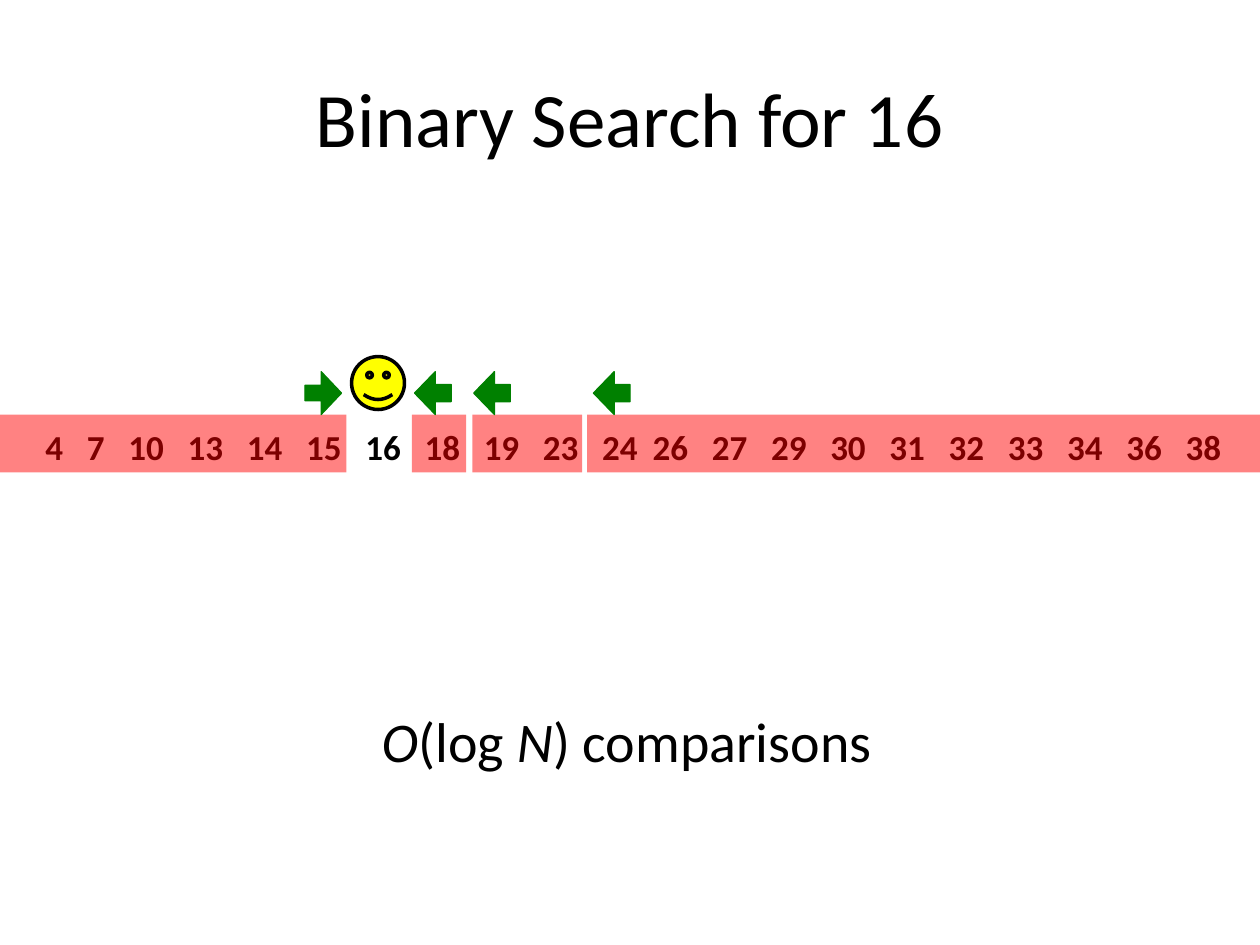
from lxml.etree import SubElement
from pptx import Presentation
from pptx.dml.color import RGBColor
from pptx.enum.shapes import MSO_SHAPE
from pptx.enum.text import MSO_ANCHOR, PP_ALIGN
from pptx.oxml.ns import qn
from pptx.util import Inches, Pt

BLACK, RED, GREEN, YELLOW = "000000", "FF0000", "008000", "FFFF00"
NUMBERS = [4, 7, 10, 13, 14, 15, 16, 18, 19, 23, 24,
           26, 27, 29, 30, 31, 32, 33, 34, 36, 38]
NUMBER_STEP = 0.47
# Distance of each number from the first one
NUMBER_OFFSETS = ([0, 0.33]
                  + [0.66 + NUMBER_STEP * i for i in range(9)]
                  + [4.82 + NUMBER_STEP * i for i in range(10)])
# Left edge and width of each discarded range
DISCARDED = [(0, 2.75), (4.66, 5.34), (3.75, 0.87), (3.27, 0.43)]
RIGHT_ARROW = (MSO_SHAPE.RIGHT_ARROW, (0.361, 0.556))
LEFT_ARROW = (MSO_SHAPE.LEFT_ARROW, (0.402, 0.568))
PROBES = [(2.42, RIGHT_ARROW), (4.71, LEFT_ARROW),
          (3.76, LEFT_ARROW), (3.29, LEFT_ARROW)]


def color(value):
    return RGBColor.from_string(value)


def set_all(target, values):
    for name, value in values.items():
        setattr(target, name, value)


def add_run(paragraph, text, **values):
    run = paragraph.add_run()
    run.text = text
    set_all(run.font, {"name": "Calibri", **values})
    run.font.color.rgb = color(BLACK)


def add_text_box(slide, left, top, width, height, **frame_values):
    """Add a wrapping text box and return its first paragraph."""
    box = slide.shapes.add_textbox(
        Inches(left), Inches(top), Inches(width), Inches(height))
    set_all(box.text_frame, {"word_wrap": True, **frame_values})
    return box.text_frame.paragraphs[0]


def add_shape(slide, kind, left, top, width, height, fill, line_width=0,
              line=BLACK):
    shape = slide.shapes.add_shape(
        kind, Inches(left), Inches(top), Inches(width), Inches(height))
    shape.shadow.inherit = False
    shape.fill.solid()
    shape.fill.fore_color.rgb = color(fill)
    if line_width:
        shape.line.color.rgb = color(line)
        shape.line.width = Pt(line_width)
    else:
        shape.line.fill.background()
    return shape


def add_title(slide, left, top, width, height):
    title = slide.shapes.title
    set_all(title, {"left": Inches(left), "top": Inches(top),
                    "width": Inches(width), "height": Inches(height)})
    title.text_frame.vertical_anchor = MSO_ANCHOR.MIDDLE
    paragraph = title.text_frame.paragraphs[0]
    paragraph.alignment = PP_ALIGN.CENTER
    add_run(paragraph, "Binary Search for 16", size=Pt(44))


def add_number_row(slide, left, top, width, height):
    """Write the sorted numbers on one line, spaced by tab stops."""
    paragraph = add_text_box(slide, left, top, width, height,
                             margin_left=Inches(0.36), margin_right=0)
    paragraph.alignment = PP_ALIGN.LEFT
    tab_list = SubElement(paragraph._p.get_or_add_pPr(), qn("a:tabLst"))
    for offset in NUMBER_OFFSETS[1:]:
        SubElement(tab_list, qn("a:tab"), pos=str(Inches(offset)), algn="l")
    add_run(paragraph, "\t".join(map(str, NUMBERS)), size=Pt(20), bold=True)


def add_discarded_ranges(slide, left, top, height):
    for offset, width in DISCARDED:
        band = add_shape(slide, MSO_SHAPE.RECTANGLE, left + offset, top,
                         width, height, RED)
        fill_color = band.fill._xPr.find(qn("a:solidFill"))[0]
        SubElement(fill_color, qn("a:alpha"), val="49000")


def add_probe_arrows(slide, left, top):
    for offset, (kind, adjustments) in PROBES:
        arrow = add_shape(slide, kind, left + offset, top, 0.29, 0.34,
                          GREEN, 0.75, GREEN)
        for index, value in enumerate(adjustments):
            arrow.adjustments[index] = value


def add_complexity(slide, left, top, width, height):
    paragraph = add_text_box(slide, left, top, width, height)
    paragraph.alignment = PP_ALIGN.CENTER
    for text, italic in [("O", True), ("(log ", False), ("N", True),
                         (") comparisons", False)]:
        add_run(paragraph, text, size=Pt(32), italic=italic)


def main():
    presentation = Presentation()
    set_all(presentation, {"slide_width": Inches(10),
                           "slide_height": Inches(7.5)})
    slide = presentation.slides.add_slide(presentation.slide_layouts[5])
    add_title(slide, 0.5, 0.3, 9, 1.25)
    add_number_row(slide, 0, 3.33, 10, 0.44)
    add_discarded_ranges(slide, 0, 3.29, 0.46)
    add_probe_arrows(slide, 0, 2.95)
    add_complexity(slide, 2.56, 5.56, 4.83, 0.63)
    add_shape(slide, MSO_SHAPE.SMILEY_FACE, 2.79, 2.83, 0.42, 0.42, YELLOW, 2)
    presentation.save("out.pptx")


if __name__ == "__main__":
    main()
